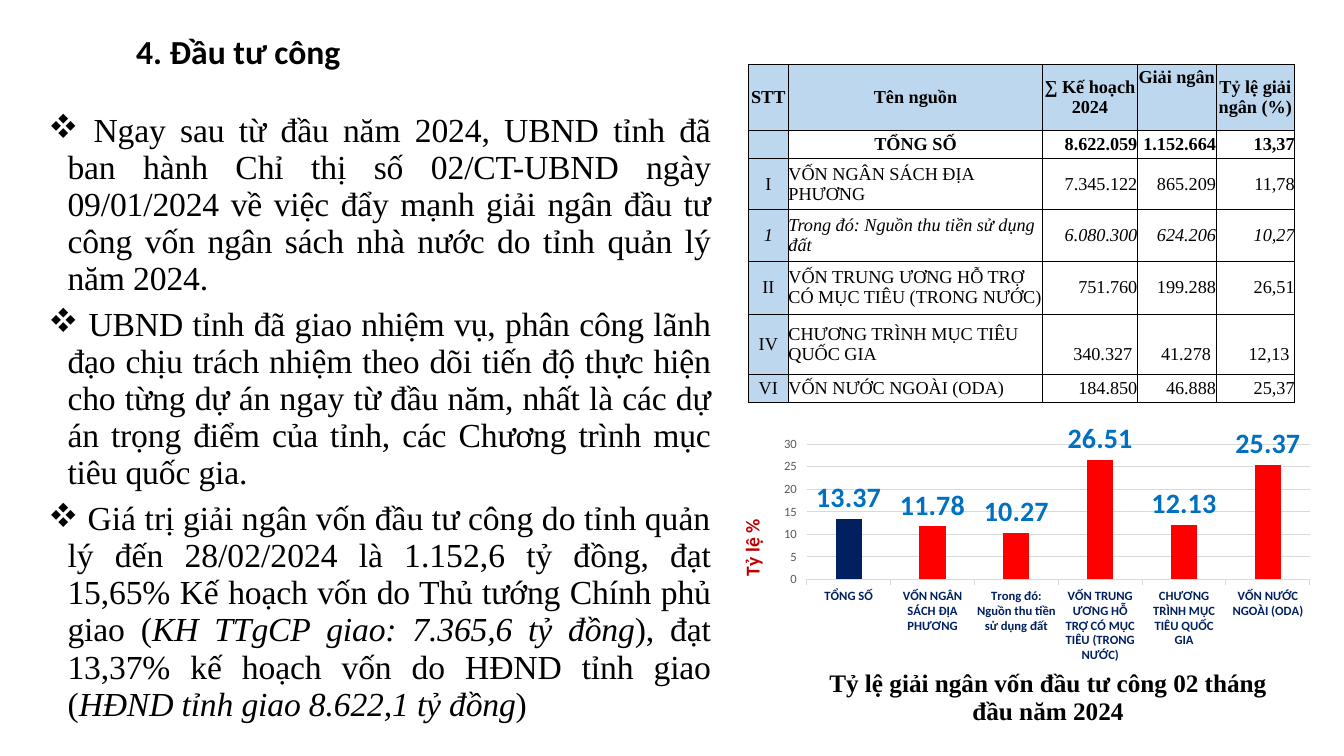
"""Build the public investment slide: findings, disbursement table and rate chart."""
from dataclasses import dataclass
from typing import NamedTuple

from lxml.etree import SubElement
from pptx import Presentation
from pptx.chart.data import CategoryChartData
from pptx.dml.color import RGBColor as RGB
from pptx.enum.chart import XL_CHART_TYPE as Chart, XL_LABEL_POSITION as LabelPos
from pptx.enum.chart import XL_TICK_MARK as Tick
from pptx.enum.text import MSO_ANCHOR as Anchor, PP_ALIGN as Align
from pptx.oxml import parse_xml
from pptx.oxml.ns import nsdecls, qn
from pptx.util import Emu, Pt

PX = 9144
NO_STYLE = "{2D5ABB26-0587-4C30-8999-92F81FD0307C}"


@dataclass(frozen=True)
class Theme:
    sans: str = "Calibri"
    serif: str = "Times New Roman"
    bullets: str = "Wingdings"
    black: str = "000000"
    header: str = "BDD7EE"
    navy: str = "002060"
    red: str = "FF0000"
    dark_red: str = "C00000"
    blue: str = "0070C0"
    gray: str = "595959"
    grid: str = "D9D9D9"
    body: int = 24
    cell: int = 13
    label: int = 20
    axis_title: int = 18
    unit: int = 14
    tick: int = 9


class Box(NamedTuple):
    x: int
    y: int
    w: int
    h: int

    def emu(self) -> list[Emu]:
        return [px(v) for v in self]


class Source(NamedTuple):
    no: str
    name: str
    plan: str
    paid: str
    rate: str
    height: int
    bold: bool = False
    italic: bool = False
    drop: int = 0
    inset: int = 0


class Span(NamedTuple):
    text: str
    italic: bool = False
    spc: int = -10


T = Theme()
TITLE = Box(125, 26, 1140, 91)
SOURCES_BOX = Box(742, 64, 542, 335)
CHART_BOX = Box(717, 418, 594, 320)
FINDINGS_BOX = Box(38, 81, 677, 667)
WIDTHS = [40, 252, 94, 78, 78]

SOURCES = [
    Source("STT", "Tên nguồn", "∑ Kế hoạch 2024", "Giải ngân", "Tỷ lệ giải ngân (%)", 65, bold=True),
    Source("", "TỔNG SỐ", "8.622.059", "1.152.664", "13,37", 28, bold=True),
    Source("I", "VỐN NGÂN SÁCH ĐỊA PHƯƠNG", "7.345.122", "865.209", "11,78", 51),
    Source("1", "Trong đó: Nguồn thu tiền sử dụng đất", "6.080.300", "624.206", "10,27", 51, italic=True),
    Source("II", "VỐN TRUNG ƯƠNG HỖ TRỢ CÓ MỤC TIÊU (TRONG NƯỚC)", "751.760", "199.288", "26,51", 53),
    Source("IV", "CHƯƠNG TRÌNH MỤC TIÊU QUỐC GIA", "340.327", "41.278", "12,13", 59, drop=20, inset=5),
    Source("VI", "VỐN NƯỚC NGOÀI (ODA)", "184.850", "46.888", "25,37", 28),
]
FINDINGS = [
    [Span(" Ngay sau từ đầu năm 2024, UBND tỉnh đã ban hành Chỉ thị số 02/CT-UBND ngày 09/01/2024 "
          "về việc đẩy mạnh giải ngân đầu tư công vốn ngân sách nhà nước do tỉnh quản lý năm 2024.")],
    [Span(" UBND tỉnh đã giao nhiệm vụ, phân công lãnh đạo chịu trách nhiệm theo dõi tiến độ thực hiện "
          "cho từng dự án ngay từ đầu năm, nhất là các dự án trọng điểm của tỉnh, "
          "các Chương trình mục tiêu quốc gia.")],
    [Span(" Giá trị giải ngân vốn đầu tư công do tỉnh quản lý đến 28/02/2024 là 1.152,6 tỷ đồng,", spc=0),
     Span(" đạt 15,65% Kế hoạch vốn do Thủ tướng Chính phủ giao ("),
     Span("KH TTgCP giao: 7.365,6 tỷ đồng", italic=True),
     Span("), đạt 13,37% kế hoạch vốn do HĐND tỉnh giao ("),
     Span("HĐND tỉnh giao 8.622,1 tỷ đồng", italic=True),
     Span(")")],
]


def px(n: int) -> Emu:
    return Emu(n * PX)


def style(font, size: int, color: str, name: str, bold: bool = False, italic: bool = False) -> None:
    font.size, font.name, font.bold, font.italic = Pt(size), name, bold, italic
    font.color.rgb = RGB.from_string(color)


def add_title(s, text: str) -> None:
    title = s.shapes.title
    title.left, title.top, title.width, title.height = TITLE.emu()
    tf = title.text_frame
    tf.text, tf.vertical_anchor = text, Anchor.TOP
    p = tf.paragraphs[0]
    p.alignment = Align.LEFT
    style(p.runs[0].font, T.body, T.black, T.sans, bold=True)


def add_plain_table(s, rows: int, cols: int, box: Box):
    frame = s.shapes.add_table(rows, cols, *box.emu())
    table = frame.table
    table.first_row = table.horz_banding = False
    table._tbl.tblPr.find(qn("a:tableStyleId")).text = NO_STYLE
    return table


def add_borders(cell) -> None:
    tc_pr = cell._tc.get_or_add_tcPr()
    for side in "LRTB":
        tc_pr.append(parse_xml(
            f'<a:ln{side} {nsdecls("a")} w="6350"><a:solidFill>'
            f'<a:srgbClr val="{T.black}"/></a:solidFill></a:ln{side}>'))


def fill_cell(cell, source: Source, row: int, col: int) -> None:
    number = row > 0 and col > 1
    raised = (row, col) == (0, 3)
    cell.margin_left = cell.margin_bottom = 0
    cell.margin_top = px(source.drop if number else 3 if raised else 0)
    cell.margin_right = px(source.inset if number else 0)
    cell.vertical_anchor = Anchor.TOP if raised else Anchor.MIDDLE
    add_borders(cell)
    if row == 0 or col == 0:
        cell.fill.solid()
        cell.fill.fore_color.rgb = RGB.from_string(T.header)
    else:
        cell.fill.background()
    cell.text_frame.text = source[col]
    p = cell.text_frame.paragraphs[0]
    p.alignment = Align.RIGHT if number else Align.LEFT if row > 1 and col == 1 else Align.CENTER
    for r in p.runs:
        style(r.font, T.cell, T.black, T.serif, source.bold, source.italic)
    if not p.runs:
        SubElement(p._p, qn("a:endParaRPr"), sz=str(T.cell * 100))


def add_sources(s) -> None:
    table = add_plain_table(s, len(SOURCES), len(WIDTHS), SOURCES_BOX)
    for column, width in zip(table.columns, WIDTHS):
        column.width = px(width)
    for i, source in enumerate(SOURCES):
        table.rows[i].height = px(source.height)
        for j in range(len(WIDTHS)):
            fill_cell(table.cell(i, j), source, i, j)


def set_layout(element, **places: float) -> None:
    for old in element.findall(qn("c:layout")):
        element.remove(old)
    target = '<c:layoutTarget val="inner"/>' if "w" in places else ""
    modes = "".join(f'<c:{k}Mode val="edge"/>' for k in "xy")
    values = "".join(f'<c:{k} val="{v}"/>' for k, v in places.items())
    layout = parse_xml(f'<c:layout {nsdecls("c")}><c:manualLayout>{target}{modes}{values}'
                       '</c:manualLayout></c:layout>')
    element.insert(0 if element.find(qn("c:tx")) is None else 1, layout)


def name_axis(axis, text: str, size: int, color: str, font: str, x: float, y: float) -> None:
    title = axis.axis_title
    title.text_frame.text = text
    style(title.text_frame.paragraphs[0].runs[0].font, size, color, font, bold=True)
    set_layout(title._element, x=x, y=y)


def add_rates(s) -> None:
    data = CategoryChartData(number_format="#,##0.00")
    data.categories = [source.name for source in SOURCES[1:]]
    data.add_series("Series 1", [float(source.rate.replace(",", ".")) for source in SOURCES[1:]])
    chart = s.shapes.add_chart(Chart.COLUMN_CLUSTERED, *CHART_BOX.emu(), data).chart
    chart.has_legend = chart.has_title = False
    style(chart.font, 10, T.black, T.sans)
    plot = chart.plots[0]
    plot.gap_width, plot.vary_by_categories = 219, False
    series = plot.series[0]
    for part, color in ((series, T.red), (series.points[0], T.navy)):
        part.format.fill.solid()
        part.format.fill.fore_color.rgb = RGB.from_string(color)
    labels = series.data_labels
    labels.show_value, labels.position = True, LabelPos.OUTSIDE_END
    labels.number_format, labels.number_format_is_linked = "#,##0.00", False
    style(labels.font, T.label, T.blue, T.sans, bold=True)
    cat, val = chart.category_axis, chart.value_axis
    cat.major_tick_mark = val.major_tick_mark = Tick.OUTSIDE
    style(cat.tick_labels.font, T.tick, T.navy, T.sans, bold=True)
    style(val.tick_labels.font, T.tick, T.gray, T.sans)
    val.tick_labels.number_format, val.tick_labels.number_format_is_linked = "#,##0", False
    val.minimum_scale, val.maximum_scale, val.major_unit = 0, 30, 5
    val.format.line.fill.background()
    for line in (cat.format.line, val.major_gridlines.format.line):
        line.color.rgb, line.width = RGB.from_string(T.grid), Pt(0.75)
    name_axis(cat, "Tỷ lệ giải ngân vốn đầu tư công 02 tháng đầu năm 2024",
              T.axis_title, T.black, T.serif, 0.17, 0.75)
    name_axis(val, "Tỷ lệ %", T.unit, T.dark_red, T.sans, 0.02, 0.29)
    body = val.axis_title.text_frame._txBody.find(qn("a:bodyPr"))
    body.set("rot", "-5400000")
    body.set("vert", "horz")
    set_layout(chart._chartSpace.find(".//" + qn("c:plotArea")), x=0.14, y=0.07, w=0.84, h=0.42)


def add_findings(s) -> None:
    cell = add_plain_table(s, 1, 1, FINDINGS_BOX).cell(0, 0)
    cell.fill.background()
    cell.vertical_anchor = Anchor.MIDDLE
    tf = cell.text_frame
    for i, spans in enumerate(FINDINGS):
        p = tf.add_paragraph() if i else tf.paragraphs[0]
        p.alignment, p.space_after = Align.JUSTIFY, Pt(6)
        p_pr = p._p.get_or_add_pPr()
        p_pr.set("marL", str(px(19)))
        p_pr.set("indent", str(px(-19)))
        SubElement(p_pr, qn("a:buFont"), typeface=T.bullets, charset="2")
        SubElement(p_pr, qn("a:buChar"), char="v")
        for span in spans:
            r = p.add_run()
            r.text = span.text
            style(r.font, T.body, T.black, T.serif, italic=span.italic)
            r._r.get_or_add_rPr().set("spc", str(span.spc))


def main() -> None:
    prs = Presentation()
    prs.slide_width, prs.slide_height = px(1333), px(750)
    s = prs.slides.add_slide(prs.slide_layouts[5])
    add_title(s, "4. Đầu tư công")
    add_sources(s)
    add_rates(s)
    add_findings(s)
    prs.save("out.pptx")


if __name__ == "__main__":
    main()
